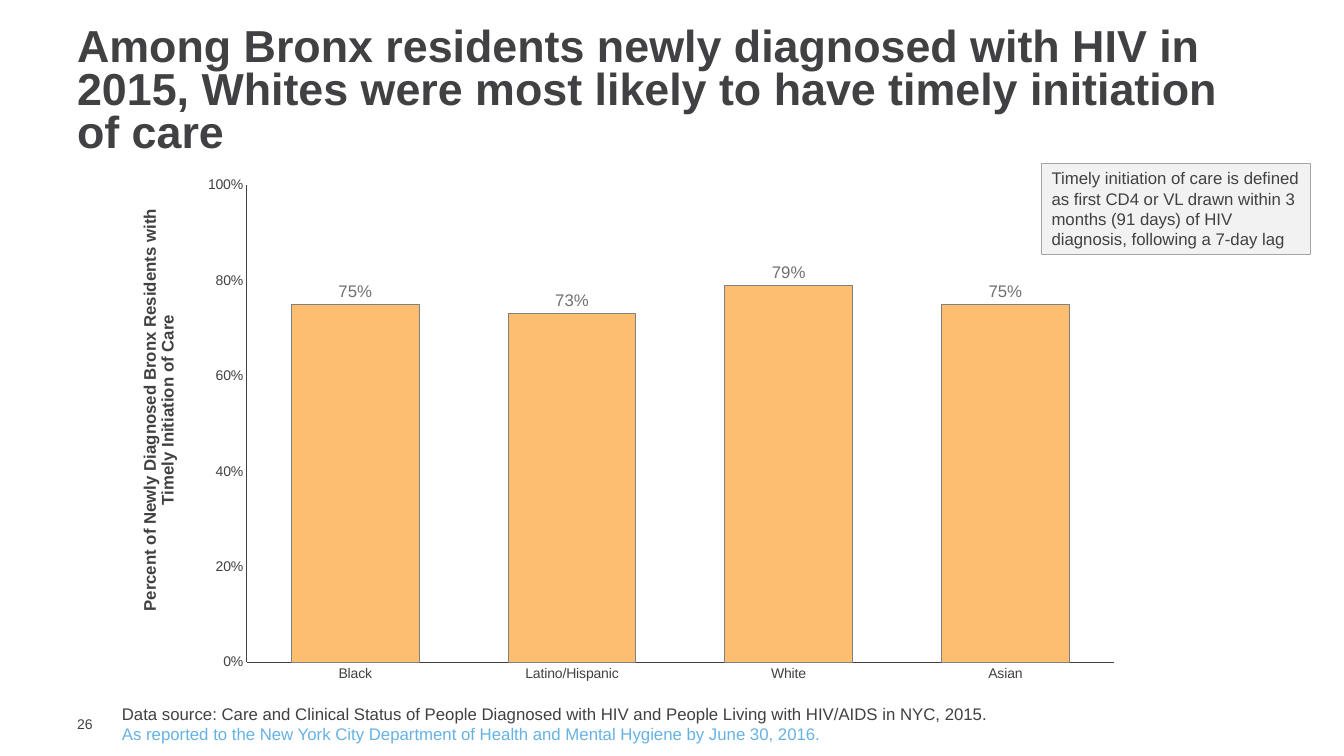
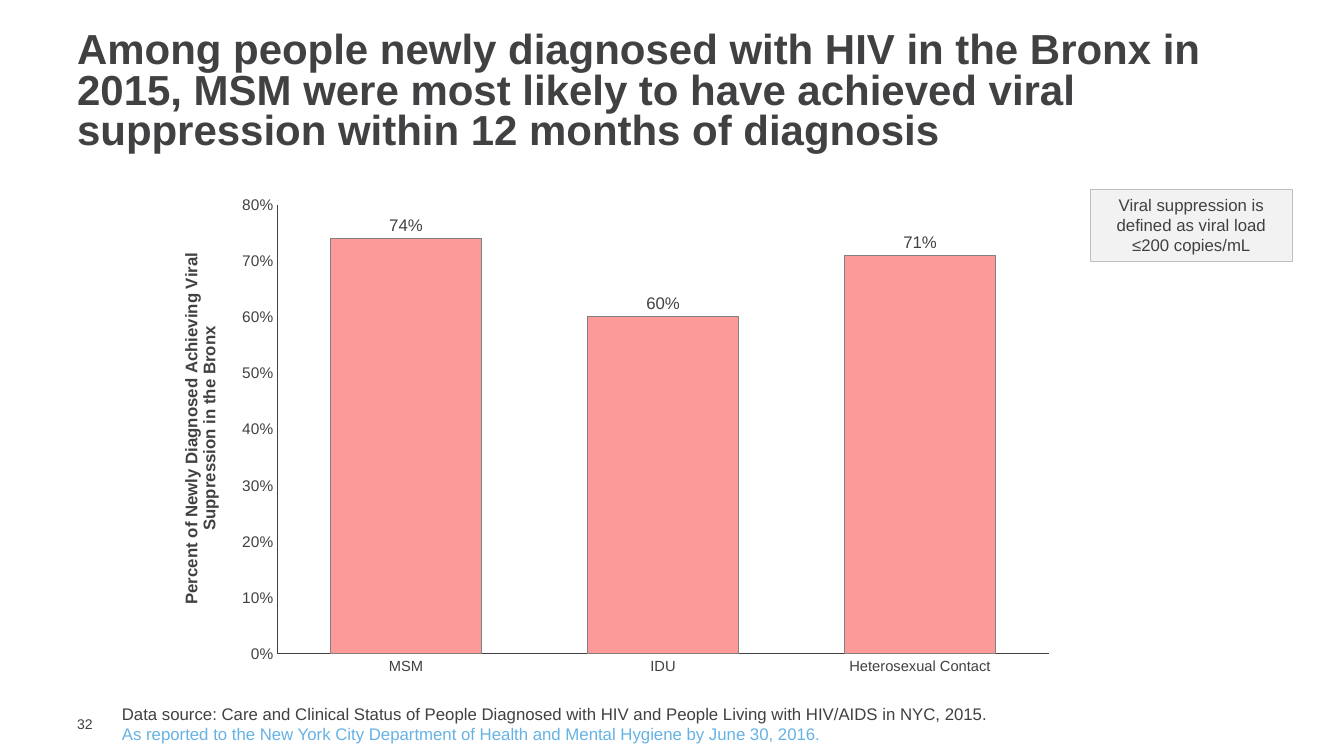
from dataclasses import dataclass

from pptx import Presentation
from pptx.chart.data import CategoryChartData
from pptx.dml.color import RGBColor
from pptx.enum.chart import XL_CHART_TYPE as ChartType
from pptx.enum.chart import XL_LABEL_POSITION as LabelPosition
from pptx.enum.chart import XL_TICK_MARK as TickMark
from pptx.enum.shapes import MSO_SHAPE as Shape
from pptx.enum.text import MSO_ANCHOR as Anchor
from pptx.enum.text import PP_ALIGN as Align
from pptx.oxml import parse_xml
from pptx.oxml.ns import nsdecls, qn
from pptx.util import Pt


@dataclass(frozen=True)
class Theme:
    font: str = "Arial"
    ink: str = "414042"
    muted: str = "706F72"
    link_blue: str = "66B2E5"
    note_fill: str = "F2F2F2"
    note_line: str = "A6A6A6"
    note_line_light: str = "BFBFBF"
    bar_line: str = "808080"
    orange: str = "FDBF6F"
    pink: str = "FB9A99"
    title_size: float = 32
    title_size_small: float = 30
    body_size: float = 12
    small_size: float = 10
    line_width: float = 0.75


THEME = Theme()
SOURCE_LINES = (
    ("Data source: Care and Clinical Status of People Diagnosed with HIV "
     "and People Living with HIV/AIDS in NYC, 2015.", THEME.ink),
    ("As reported to the New York City Department of Health and Mental Hygiene "
     "by June 30, 2016.", THEME.link_blue),
)


def points(*lengths):
    return [Pt(length) for length in lengths]


def set_layout(element, index, **fractions):
    """Place a chart part by fractions of the chart's size."""
    for old in element.findall(qn("c:layout")):
        element.remove(old)
    target = '<c:layoutTarget val="inner"/>' if "w" in fractions else ""
    modes = '<c:xMode val="edge"/><c:yMode val="edge"/>'
    values = "".join(f'<c:{key} val="{value}"/>' for key, value in fractions.items())
    element.insert(index, parse_xml(
        f'<c:layout {nsdecls("c")}><c:manualLayout>{target}{modes}{values}'
        "</c:manualLayout></c:layout>"))


class Report:
    def __init__(self, theme):
        self.theme = theme
        self.deck = Presentation()
        self.deck.slide_width, self.deck.slide_height = points(960, 540)
        self.page = None

    def new_page(self, number):
        self.page = self.deck.slides.add_slide(self.deck.slide_layouts[6])
        self.text((48, 511, 31, 12), [(str(number), self.theme.ink)],
                  self.theme.small_size, anchor=Anchor.MIDDLE,
                  margins=(7.2, 0, 0, 0))
        self.text((80, 499, 699, 36), SOURCE_LINES, self.theme.body_size)

    # Text
    def style_font(self, font, size, color=None, bold=False):
        for name, value in {"name": self.theme.font, "size": Pt(size),
                            "bold": bold}.items():
            setattr(font, name, value)
        font.color.rgb = RGBColor.from_string(color or self.theme.ink)

    def fill_frame(self, frame, lines, size, bold=False, anchor=Anchor.TOP,
                   align=Align.LEFT, spacing=None, margins=(7.2, 3.6, 7.2, 3.6)):
        left, top, right, bottom = points(*margins)
        settings = {"word_wrap": True, "vertical_anchor": anchor,
                    "margin_left": left, "margin_top": top,
                    "margin_right": right, "margin_bottom": bottom}
        for name, value in settings.items():
            setattr(frame, name, value)
        for index, (words, color) in enumerate(lines):
            para = frame.paragraphs[0] if index == 0 else frame.add_paragraph()
            para.alignment = align
            para.line_spacing = spacing
            span = para.add_run()
            span.text = words
            self.style_font(span.font, size, color, bold)

    def text(self, place, lines, size, **options):
        box = self.page.shapes.add_textbox(*points(*place))
        self.fill_frame(box.text_frame, lines, size, **options)

    def title(self, words, top, height, size):
        self.text((48, top, 864, height), [(words, self.theme.ink)], size,
                  bold=True, anchor=Anchor.MIDDLE, spacing=0.8)

    def note(self, place, words, line, align=Align.LEFT):
        box = self.page.shapes.add_shape(Shape.RECTANGLE, *points(*place))
        box.shadow.inherit = False
        self.paint(box, self.theme.note_fill, line)
        self.fill_frame(box.text_frame, [(words, self.theme.ink)],
                        self.theme.body_size, align=align)

    # Lines and fills
    def draw_line(self, line, color):
        line.color.rgb = RGBColor.from_string(color)
        line.width = Pt(self.theme.line_width)

    def paint(self, target, fill, line):
        target.fill.solid()
        target.fill.fore_color.rgb = RGBColor.from_string(fill)
        self.draw_line(target.line, line)

    # Column chart
    def style_axis(self, axis, size):
        for name, value in {"has_major_gridlines": False,
                            "major_tick_mark": TickMark.NONE,
                            "minor_tick_mark": TickMark.NONE}.items():
            setattr(axis, name, value)
        self.style_font(axis.tick_labels.font, size)
        self.draw_line(axis.format.line, self.theme.ink)

    def column_chart(self, place, shares, fill, label_color, axis_title,
                     title_at, plot, maximum, step, axis_sizes):
        data = CategoryChartData(number_format="0%")
        data.categories = list(shares)
        data.add_series("Series 1", list(shares.values()))
        chart = self.page.shapes.add_chart(
            ChartType.COLUMN_CLUSTERED, *points(*place), data).chart
        chart.has_title = chart.has_legend = False
        self.style_font(chart.font, self.theme.small_size)

        for axis, size in zip((chart.category_axis, chart.value_axis), axis_sizes):
            self.style_axis(axis, size)
        value_axis = chart.value_axis
        for name, value in {"minimum_scale": 0, "maximum_scale": maximum,
                            "major_unit": step}.items():
            setattr(value_axis, name, value)
        value_axis.tick_labels.number_format = "0%"
        value_axis.tick_labels.number_format_is_linked = False
        span = value_axis.axis_title.text_frame.paragraphs[0].add_run()
        span.text = axis_title
        self.style_font(span.font, self.theme.body_size, bold=True)

        columns = chart.plots[0]
        for name, value in {"gap_width": 70, "overlap": -27,
                            "vary_by_categories": False,
                            "has_data_labels": True}.items():
            setattr(columns, name, value)
        self.paint(columns.series[0].format, fill, self.theme.bar_line)
        labels = columns.data_labels
        for name, value in {"show_value": True, "number_format": "0%",
                            "number_format_is_linked": False,
                            "position": LabelPosition.OUTSIDE_END}.items():
            setattr(labels, name, value)
        self.style_font(labels.font, self.theme.body_size, label_color)

        set_layout(value_axis.axis_title._element, 1, **dict(zip("xy", title_at)))
        plot_area = chart._chartSpace.find(".//" + qn("c:plotArea"))
        set_layout(plot_area, 0, **dict(zip("xywh", plot)))


def main():
    report = Report(THEME)

    # Timely initiation of care
    report.new_page(26)
    report.title("Among Bronx residents newly diagnosed with HIV in 2015, Whites "
                 "were most likely to have timely initiation of care",
                 16.5, 100, THEME.title_size)
    report.column_chart(
        (90, 121, 720, 374.5),
        {"Black": 0.75, "Latino/Hispanic": 0.73, "White": 0.79, "Asian": 0.75},
        THEME.orange, THEME.muted,
        "Percent of Newly Diagnosed Bronx Residents with Timely Initiation of Care",
        title_at=(0.01, 0.07), plot=(0.12, 0.03, 0.86, 0.91),
        maximum=1, step=0.2, axis_sizes=(10, 10))
    report.note((744, 116.5, 192, 65.5),
                "Timely initiation of care is defined as first CD4 or VL drawn within "
                "3 months (91 days) of HIV diagnosis, following a 7-day lag",
                THEME.note_line)

    # Viral suppression
    report.new_page(32)
    report.title("Among people newly diagnosed with HIV in the Bronx in 2015, MSM "
                 "were most likely to have achieved viral suppression within "
                 "12 months of diagnosis", 19.5, 94, THEME.title_size_small)
    report.column_chart(
        (114, 135.5, 648, 356.5),
        {"MSM": 0.74, "IDU": 0.6, "Heterosexual Contact": 0.71},
        THEME.pink, THEME.ink,
        "Percent of Newly Diagnosed Achieving Viral Suppression in the Bronx",
        title_at=(0.02, 0.12), plot=(0.13, 0.03, 0.85, 0.9),
        maximum=0.8, step=0.1, axis_sizes=(10.5, 11))
    report.note((779, 135.5, 144, 51),
                "Viral suppression is defined as viral load ≤200 copies/mL",
                THEME.note_line_light, Align.CENTER)

    report.deck.save("out.pptx")


if __name__ == "__main__":
    main()
